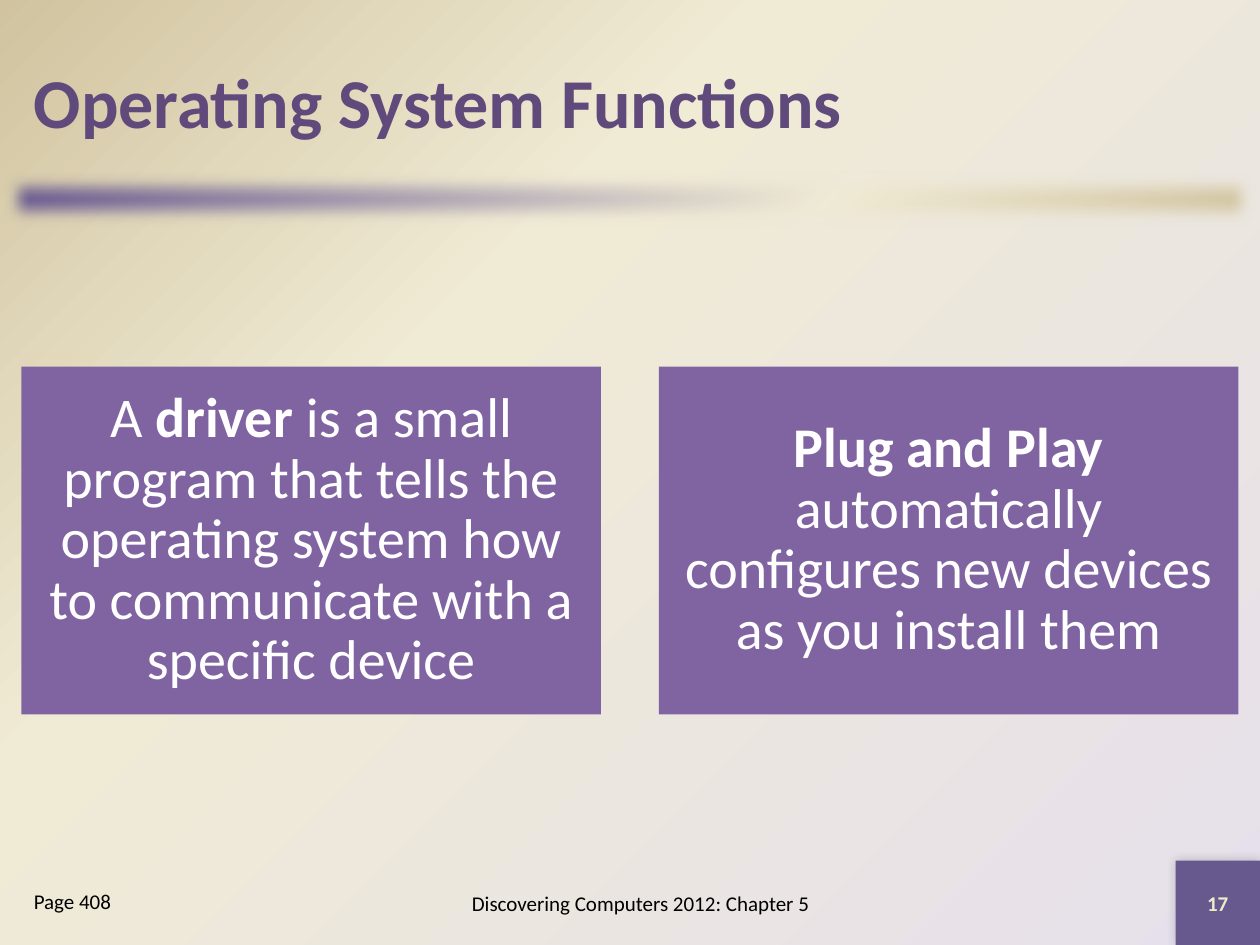
from dataclasses import dataclass

from lxml import etree
from pptx import Presentation
from pptx.dml.color import RGBColor
from pptx.enum.shapes import MSO_SHAPE as Shape
from pptx.enum.text import MSO_ANCHOR as Anchor, PP_ALIGN as Align
from pptx.oxml import parse_xml
from pptx.oxml.ns import nsdecls, qn
from pptx.util import Inches, Pt

INDIGO = RGBColor(0x67, 0x58, 0x8E)
LAVENDER = RGBColor(0xE6, 0xE0, 0xEC)
CREAM = RGBColor(0xF0, 0xEB, 0xD5)
TAN = RGBColor(0xD1, 0xC3, 0x9F)
TITLE = RGBColor(0x60, 0x4A, 0x7B)
PURPLE = RGBColor(0x80, 0x64, 0xA2)
NUMBER = RGBColor(0xEE, 0xEB, 0xCA)
WHITE = RGBColor(0xFF, 0xFF, 0xFF)
BLACK = RGBColor(0, 0, 0)

RADIAL = ('<a:path path="circle"><a:fillToRect l="100000" t="100000"/>'
          '</a:path>')
DIAGONAL = '<a:lin ang="2700000" scaled="0"/>'
SOFT_EDGE = f'<a:softEdge {nsdecls("a")} rad="127000"/>'
SHADOW = (f'<a:outerShdw {nsdecls("a")} blurRad="76200" dist="0" dir="13500000">'
          '<a:srgbClr val="000000"><a:alpha val="20000"/></a:srgbClr>'
          '</a:outerShdw>')


@dataclass
class Box:
    left: float
    top: float
    width: float
    height: float

    def lengths(self) -> list:
        return [Inches(v) for v in (self.left, self.top, self.width, self.height)]


@dataclass
class Run:
    text: str
    bold: bool = False


def set_gradient(fill, element, first: RGBColor, direction: str) -> None:
    """Fade from the first colour through cream to tan."""
    fill.gradient()
    old = next(element.iter(qn("a:gradFill")))
    stops = "".join(
        f'<a:gs pos="{pos}"><a:srgbClr val="{color}"/></a:gs>'
        for pos, color in ((0, first), (65000, CREAM), (100000, TAN)))
    new = parse_xml(f'<a:gradFill {nsdecls("a")} rotWithShape="1">'
                    f'<a:gsLst>{stops}</a:gsLst>{direction}</a:gradFill>')
    old.getparent().replace(old, new)


def add_rect(s, box: Box, color: RGBColor, effect: str = ""):
    sp = s.shapes.add_shape(Shape.RECTANGLE, *box.lengths())
    sp.fill.solid()
    sp.fill.fore_color.rgb = color
    sp.line.fill.background()
    sp.shadow.inherit = False
    if effect:
        sp._element.spPr.find(qn("a:effectLst")).append(etree.fromstring(effect))
    return sp


def write(sp, runs: list[Run], size: float, color: RGBColor,
          align=Align.CENTER, anchor=Anchor.MIDDLE):
    tf = sp.text_frame
    tf.word_wrap = True
    tf.vertical_anchor = anchor
    p = tf.paragraphs[0]
    p.alignment = align
    for run in runs:
        r = p.add_run()
        r.text = run.text
        r.font.name = "Calibri"
        r.font.size = Pt(size)
        r.font.bold = run.bold
        r.font.color.rgb = color
    return tf


def add_text(s, box: Box, run: Run, size: float, color: RGBColor, **layout) -> None:
    write(s.shapes.add_textbox(*box.lengths()), [run], size, color, **layout)


def add_card(s, box: Box, runs: list[Run]) -> None:
    tf = write(add_rect(s, box, PURPLE), runs, 32, WHITE)
    tf.margin_left = tf.margin_right = Inches(0.13)
    tf.margin_top = tf.margin_bottom = Inches(0.13)
    tf.paragraphs[0].line_spacing = 0.9


def main() -> None:
    prs = Presentation()
    prs.slide_width, prs.slide_height = Inches(10), Inches(7.5)
    s = prs.slides.add_slide(prs.slide_layouts[6])

    # Background and soft divider
    set_gradient(s.background.fill, s._element, LAVENDER, RADIAL)
    divider = add_rect(s, Box(0, 1.33, 10, 0.5), INDIGO, SOFT_EDGE)
    set_gradient(divider.fill, divider._element, INDIGO, DIAGONAL)

    # Title
    add_text(s, Box(0.17, 0.17, 9.67, 1.25), Run("Operating System Functions", True),
             40, TITLE, align=Align.LEFT)

    # Definition cards
    cards = [
        [Run("A "), Run("driver", True),
         Run(" is a small program that tells the operating system how to "
             "communicate with a specific device")],
        [Run("Plug and Play", True),
         Run(" automatically configures new devices as you install them")],
    ]
    width, gap = 4.6, 0.46
    for i, runs in enumerate(cards):
        add_card(s, Box(0.17 + i * (width + gap), 2.91, width, 2.76), runs)

    # Footer: page reference, book chapter and slide number
    add_text(s, Box(0.17, 7, 1.83, 0.5), Run("Page 408"), 12, BLACK,
             align=Align.LEFT, anchor=Anchor.TOP)
    add_text(s, Box(3, 6.92, 4.17, 0.5),
             Run("Discovering Computers 2012: Chapter 5"), 12, BLACK)
    corner = add_rect(s, Box(9.33, 6.83, 0.67, 0.67), INDIGO, SHADOW)
    write(corner, [Run("17", True)], 12, NUMBER)

    prs.save("out.pptx")


if __name__ == "__main__":
    main()
